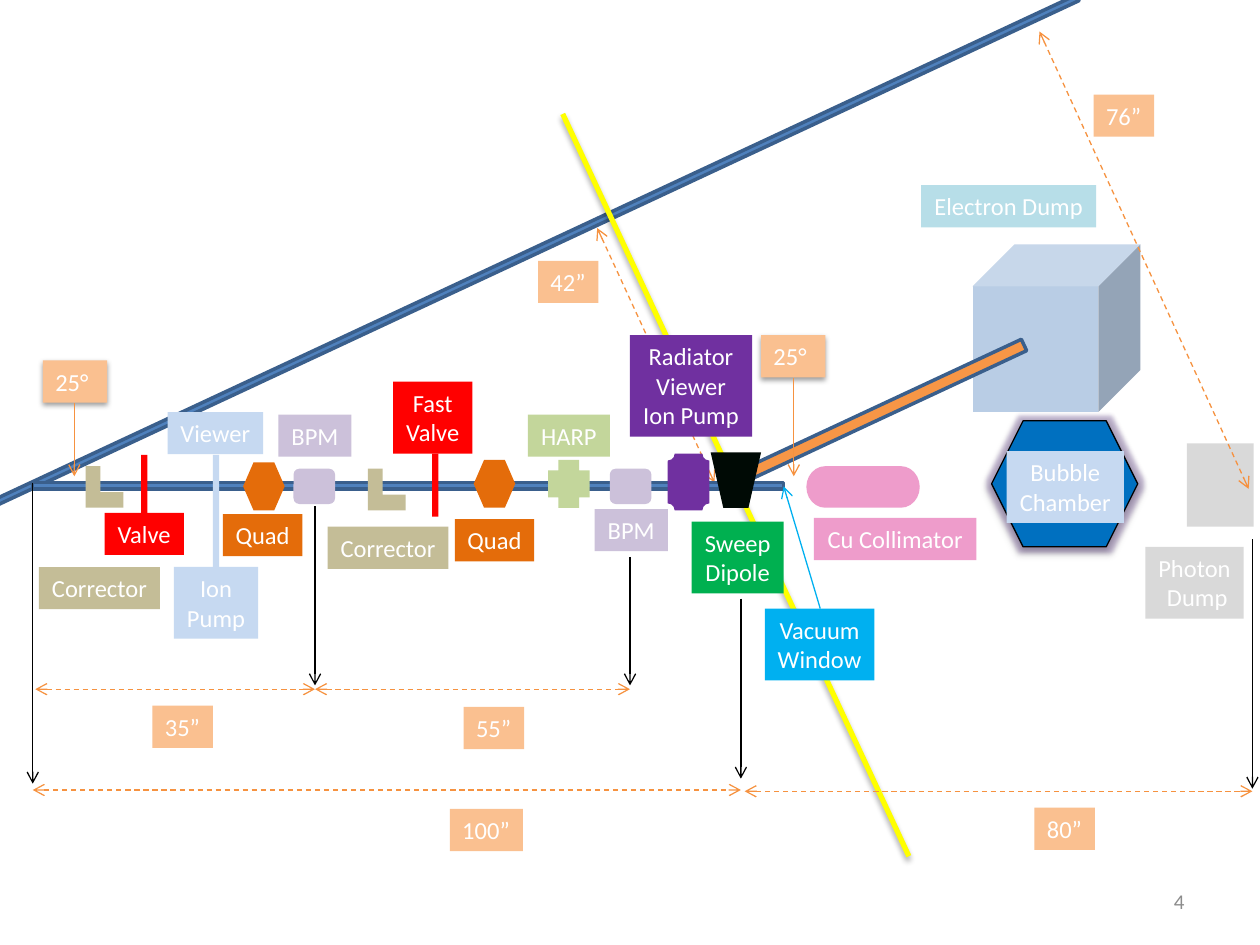
from lxml.etree import SubElement
from pptx import Presentation
from pptx.dml.color import RGBColor
from pptx.enum.dml import MSO_LINE
from pptx.enum.shapes import MSO_CONNECTOR, MSO_SHAPE
from pptx.enum.text import MSO_ANCHOR, MSO_AUTO_SIZE, PP_ALIGN
from pptx.oxml.ns import qn
from pptx.util import Inches, Pt

WIDTH, HEIGHT = Inches(10), Inches(7.5)
COLUMN, ROW = WIDTH / 100, HEIGHT / 75
BEND = -25
FONT = "Calibri"
WHITE, BLACK, RED, SKY = "FFFFFF", "000000", "FF0000", "00B0F0"
PEACH, ORANGE, QUAD, BEAM, BEAM_EDGE = "FAC090", "F69240", "E46C0A", "4F81BD", "3A5F8C"
PALE_BLUE, LILAC, TAN, LIME = "C6D9F1", "CCC1DA", "C4BD97", "C3D69B"
PURPLE, GREEN, PINK, GRAY = "7030A0", "00B050", "EE9CCB", "D9D9D9"


def color(code):
    return RGBColor.from_string(code)


def place(column, row, columns, rows):
    return [round(value) for value in
            (column * COLUMN, row * ROW, columns * COLUMN, rows * ROW)]


def add_effects(item, shadow=None, glow=None):
    properties = item._element.spPr
    effects = properties.find(qn("a:effectLst"))
    if effects is None:
        effects = SubElement(properties, qn("a:effectLst"))
    if glow:
        halo = SubElement(effects, qn("a:glow"), rad=str(Pt(5)))
        add_tint(halo, glow, 40)
    if shadow:
        distance, opacity = shadow
        cast = SubElement(effects, qn("a:outerShdw"), blurRad=str(Pt(3.1)),
                          dist=str(Pt(distance)), dir="5400000", rotWithShape="0")
        add_tint(cast, BLACK, opacity)


def add_tint(parent, code, opacity):
    tint = SubElement(parent, qn("a:srgbClr"), val=code)
    SubElement(tint, qn("a:alpha"), val=str(opacity * 1000))


def add_part(page, kind, area, fill, edge=None, weight=2, turn=0, adjust=()):
    part = page.shapes.add_shape(kind, *place(*area))
    part.shadow.inherit = False
    part.fill.solid()
    part.fill.fore_color.rgb = color(fill)
    if edge:
        part.line.color.rgb = color(edge)
        part.line.width = Pt(weight)
    else:
        part.line.fill.background()
    part.rotation = turn
    for index, value in enumerate(adjust):
        part.adjustments[index] = value
    return part


def add_line(page, start, end, code, weight=0.75, ends=("tailEnd",), dashed=False):
    line = page.shapes.add_connector(
        MSO_CONNECTOR.STRAIGHT, *place(*start, *end))
    line.line.color.rgb = color(code)
    line.line.width = Pt(weight)
    if dashed:
        line.line.dash_style = MSO_LINE.DASH
    for name in ends:
        SubElement(line.line._get_or_add_ln(), qn("a:" + name), type="arrow")
    add_effects(line)
    return line


def add_dimension(page, start, end):
    add_line(page, start, end, ORANGE, ends=("headEnd", "tailEnd"), dashed=True)


def write(box, lines, size, code, align):
    for index, text in enumerate(lines):
        para = box.text_frame.paragraphs[0] if index == 0 else box.text_frame.add_paragraph()
        para.alignment = align
        span = para.add_run()
        span.text = text
        span.font.size = Pt(size)
        span.font.name = FONT
        span.font.color.rgb = color(code)


def add_label(page, column, row, columns, text, fill, align=PP_ALIGN.CENTER, wrap=False):
    lines = text.split("\n")
    box = page.shapes.add_textbox(*place(column, row, columns, 1 + 2.35 * len(lines)))
    box.fill.solid()
    box.fill.fore_color.rgb = color(fill)
    box.text_frame.word_wrap = wrap
    box.text_frame.auto_size = MSO_AUTO_SIZE.SHAPE_TO_FIT_TEXT
    write(box, lines, 14, WHITE, align)
    return box


def add_angle(page, column, row, arrow_column):
    box = add_label(page, column, row, 5.1, "25°", PEACH, PP_ALIGN.LEFT, True)
    add_effects(box, shadow=(1.6, 38))
    add_line(page, (arrow_column, row + 3.4), (arrow_column, 37.8), ORANGE)


def add_beams(page):
    add_part(page, MSO_SHAPE.CUBE, (77.2, 19.4, 13.3, 13.3), "B9CDE5")
    add_part(page, MSO_SHAPE.RECTANGLE, (-4.8, 19.6, 94.8, 0.5), BEAM, BEAM_EDGE, turn=BEND)
    axis = add_line(page, (58.4, 6), (58.4, 71), "FFFF00", 3, ends=())
    axis._element.spPr.find(qn("a:xfrm")).set("rot", str((360 + BEND) * 60000))
    add_effects(axis, shadow=(1.8, 35))
    add_dimension(page, (47.4, 18.1), (56.7, 38.3))
    add_part(page, MSO_SHAPE.RECTANGLE, (2.6, 38.3, 59.6, 0.5), BEAM, BEAM_EDGE)
    add_part(page, MSO_SHAPE.RECTANGLE, (56.4, 32.4, 26.1, 1), "F79646", BEAM_EDGE, turn=BEND)


def add_devices(page):
    for column, row, rows, fill in ((11.2, 36.1, 5, RED), (16.9, 36.1, 8.9, PALE_BLUE),
                                    (34.3, 36, 5, RED)):
        add_part(page, MSO_SHAPE.RECTANGLE, (column, row, 0.5, rows), fill)
    for column, row in ((19.3, 36.7), (37.6, 36.5)):
        add_part(page, MSO_SHAPE.HEXAGON, (column, row, 3.3, 3.8), QUAD)
    for column in (23.3, 48.4):
        add_part(page, MSO_SHAPE.ROUNDED_RECTANGLE, (column, 37.2, 3.3, 2.8), LILAC)
    for column, row in ((6.8, 37), (29.2, 37.2)):
        add_part(page, MSO_SHAPE.CORNER, (column, row, 3, 3.3), TAN, adjust=(0.41, 0.39))
    add_part(page, MSO_SHAPE.CROSS, (43.5, 36.5, 3.3, 3.8), LIME)
    add_part(page, MSO_SHAPE.PLAQUE, (53, 36, 3.3, 4.5), PURPLE)
    add_part(page, MSO_SHAPE.TRAPEZOID, (56.4, 35.9, 4, 4.4), "000A05", turn=180)
    add_part(page, MSO_SHAPE.FLOWCHART_DIRECT_ACCESS_STORAGE, (64, 37, 9, 3.3), PINK)
    add_part(page, MSO_SHAPE.RECTANGLE, (94.2, 35.2, 5.3, 6.6), GRAY)
    chamber = add_part(page, MSO_SHAPE.HEXAGON, (78.7, 33.4, 11.6, 10), "0070C0", BLACK, 0.75)
    add_effects(chamber, shadow=(1.6, 38), glow="8064A2")


def add_distances(page):
    for column, top, bottom in ((2.6, 38.3, 62.2), (25, 40.2, 54.4), (50, 44.2, 54.4),
                                (58.8, 47.5, 61.8), (99.4, 42.8, 62.6)):
        add_line(page, (column, top), (column, bottom), BLACK)
    for left, right, row in ((2.8, 25, 54.7), (25, 50, 54.7),
                             (2.6, 58.8, 62.7), (59.1, 99.4, 62.8)):
        add_dimension(page, (left, row), (right, row))
    add_dimension(page, (82.5, 2.5), (99.1, 38.8))
    for column, row, columns, text in (
            (42.7, 20.7, 4.8, "42”"), (86.8, 7.5, 4.8, "76”"), (12.1, 56, 4.8, "35”"),
            (36.8, 56.1, 4.8, "55”"), (35.7, 64.2, 5.8, "100”"), (82.1, 64.1, 4.8, "80”")):
        add_label(page, column, row, columns, text, PEACH, PP_ALIGN.LEFT)
    add_angle(page, 3.4, 28.6, 5.9)
    add_angle(page, 60.4, 26.6, 63)


def add_device_labels(page):
    add_line(page, (65.1, 48.3), (62.2, 38.6), SKY)
    for label in (
            (8.3, 40.7, 6.3, "Valve", RED),
            (13.8, 45, 6.7, "Ion\nPump", PALE_BLUE),
            (13.3, 32.7, 7.6, "Viewer", PALE_BLUE),
            (17.7, 40.8, 6.3, "Quad", QUAD),
            (22.1, 32.9, 5.8, "BPM", LILAC),
            (26, 41.8, 9.6, "Corrector", TAN),
            (41.9, 32.9, 6.5, "HARP", LIME),
            (31.2, 30.3, 6.3, "Fast\nValve", RED),
            (36.1, 41.2, 6.3, "Quad", QUAD),
            (47.2, 40.4, 5.8, "BPM", LILAC),
            (3.1, 45, 9.6, "Corrector", TAN),
            (50, 26.6, 9.7, "Radiator\nViewer\nIon Pump", PURPLE),
            (54.9, 41.4, 7.3, "Sweep\nDipole", GREEN),
            (60.7, 48.3, 8.7, "Vacuum\nWindow", SKY),
            (64.6, 41.1, 12.9, "Cu Collimator", PINK),
            (73.1, 14.7, 13.9, "Electron Dump", "B7DEE8"),
            (90.9, 43.4, 7.8, "Photon\n Dump", GRAY),
            (79.9, 35.8, 9.3, "Bubble\nChamber", PALE_BLUE)):
        add_label(page, *label)


def add_page_number(page):
    box = page.shapes.add_textbox(*place(71.7, 69.5, 23.3, 4))
    box.text_frame.word_wrap = True
    box.text_frame.vertical_anchor = MSO_ANCHOR.MIDDLE
    write(box, ["4"], 12, "8C8C8C", PP_ALIGN.RIGHT)


def main():
    deck = Presentation()
    deck.slide_width, deck.slide_height = WIDTH, HEIGHT
    page = deck.slides.add_slide(deck.slide_layouts[6])
    add_beams(page)
    add_devices(page)
    add_distances(page)
    add_device_labels(page)
    add_page_number(page)
    deck.save("out.pptx")


if __name__ == "__main__":
    main()
